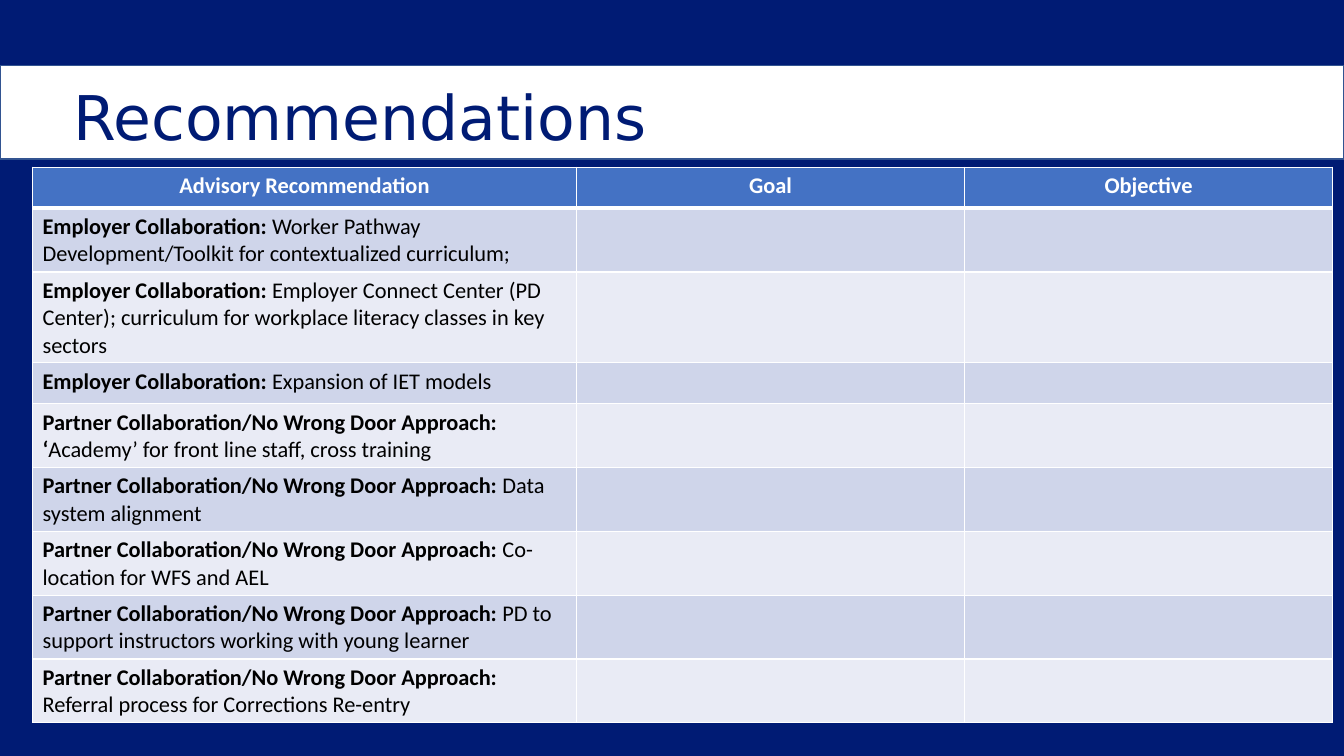
from lxml import etree
from pptx import Presentation
from pptx.dml.color import RGBColor
from pptx.enum.shapes import MSO_SHAPE
from pptx.enum.text import MSO_ANCHOR, PP_ALIGN
from pptx.oxml.ns import qn
from pptx.util import Cm, Pt

RECTANGLE = MSO_SHAPE.RECTANGLE
BOTTOM = MSO_ANCHOR.BOTTOM
LEFT, CENTER = PP_ALIGN.LEFT, PP_ALIGN.CENTER

NAVY, WHITE, BLACK = "001B74", "FFFFFF", "000000"
HEADER_FILL, BAND_FILLS = "4472C4", ("CFD5EA", "E9EBF5")
TITLE_FORMAT = {"name": "DejaVu Sans", "size": Pt(44), "bold": False}
LABEL_FORMAT = {"name": "Calibri", "size": Pt(16), "bold": True}
DETAIL_FORMAT = {**LABEL_FORMAT, "bold": False}

HEADINGS = ["Advisory Recommendation", "Goal", "Objective"]
COLUMN_WIDTHS = [13.71, 9.78, 9.27]
ROW_HEIGHT = 1.03
EMPLOYER = "Employer Collaboration: "
PARTNER = "Partner Collaboration/No Wrong Door Approach: "
RECOMMENDATIONS = [
    (EMPLOYER, "Worker Pathway Development/Toolkit for contextualized curriculum;"),
    (EMPLOYER, "Employer Connect Center (PD Center); curriculum for workplace "
               "literacy classes in key sectors"),
    (EMPLOYER, "Expansion of IET models"),
    (PARTNER + "‘", "Academy’ for front line staff, cross training"),
    (PARTNER, "Data system alignment"),
    (PARTNER, "Co-location for WFS and AEL"),
    (PARTNER, "PD to support instructors working with young learner"),
    (PARTNER, "Referral process for Corrections Re-entry"),
]


def color(hex_code):
    return RGBColor.from_string(hex_code)


def paint(fill, hex_code):
    fill.solid()
    fill.fore_color.rgb = color(hex_code)


def add_span(para, text, formats, hex_code):
    span = para.add_run()
    span.text = text
    for name, value in formats.items():
        setattr(span.font, name, value)
    span.font.color.rgb = color(hex_code)


def add_title_band(page, width):
    band = page.shapes.add_shape(RECTANGLE, 0, Cm(1.65), width, Cm(2.36))
    band.shadow.inherit = False
    paint(band.fill, WHITE)
    band.line.color.rgb = color("325491")
    band.line.width = Pt(1)


def add_title(page, text):
    box = page.shapes.add_textbox(Cm(1.6), Cm(1.63), Cm(31.01), Cm(2.36))
    frame = box.text_frame
    frame.word_wrap = True
    frame.vertical_anchor = BOTTOM
    para = frame.paragraphs[0]
    para.line_spacing = 0.9
    add_span(para, text, TITLE_FORMAT, NAVY)


def set_borders(cell, bottom_width):
    properties = cell._tc.get_or_add_tcPr()
    widths = {"a:lnL": 1, "a:lnR": 1, "a:lnT": 1, "a:lnB": bottom_width}
    for tag, width in widths.items():
        line = etree.SubElement(properties, qn(tag), w=str(Pt(width)))
        solid = etree.SubElement(line, qn("a:solidFill"))
        etree.SubElement(solid, qn("a:srgbClr"), val=WHITE)


def fill_cell(cell, spans, fill, align=LEFT, bottom_width=1):
    # Borders must come before the fill in the cell properties
    set_borders(cell, bottom_width)
    paint(cell.fill, fill)
    para = cell.text_frame.paragraphs[0]
    para.alignment = align
    for text, formats, hex_code in spans:
        add_span(para, text, formats, hex_code)


def add_recommendation_table(page):
    row_count = len(RECOMMENDATIONS) + 1
    table = page.shapes.add_table(
        row_count, len(HEADINGS), Cm(0.82), Cm(1.66 * 2.54),
        Cm(sum(COLUMN_WIDTHS)), Cm(ROW_HEIGHT * row_count)).table
    for column, width in zip(table.columns, COLUMN_WIDTHS):
        column.width = Cm(width)
    for row in table.rows:
        row.height = Cm(ROW_HEIGHT)

    # Header row
    for index, heading in enumerate(HEADINGS):
        fill_cell(table.cell(0, index), [(heading, LABEL_FORMAT, WHITE)],
                  HEADER_FILL, CENTER, bottom_width=3)

    # Banded rows, with goal and objective left open
    for index, (label, detail) in enumerate(RECOMMENDATIONS):
        spans = [(label, LABEL_FORMAT, BLACK), (detail, DETAIL_FORMAT, BLACK)]
        for column in range(len(HEADINGS)):
            fill_cell(table.cell(index + 1, column),
                      spans if column == 0 else [], BAND_FILLS[index % 2])


def main():
    deck = Presentation()
    deck.slide_width, deck.slide_height = Cm(33.87), Cm(19.05)
    page = deck.slides.add_slide(deck.slide_layouts[6])
    paint(page.background.fill, NAVY)

    add_title_band(page, deck.slide_width)
    add_title(page, "Recommendations")
    add_recommendation_table(page)
    deck.save("out.pptx")


if __name__ == "__main__":
    main()
